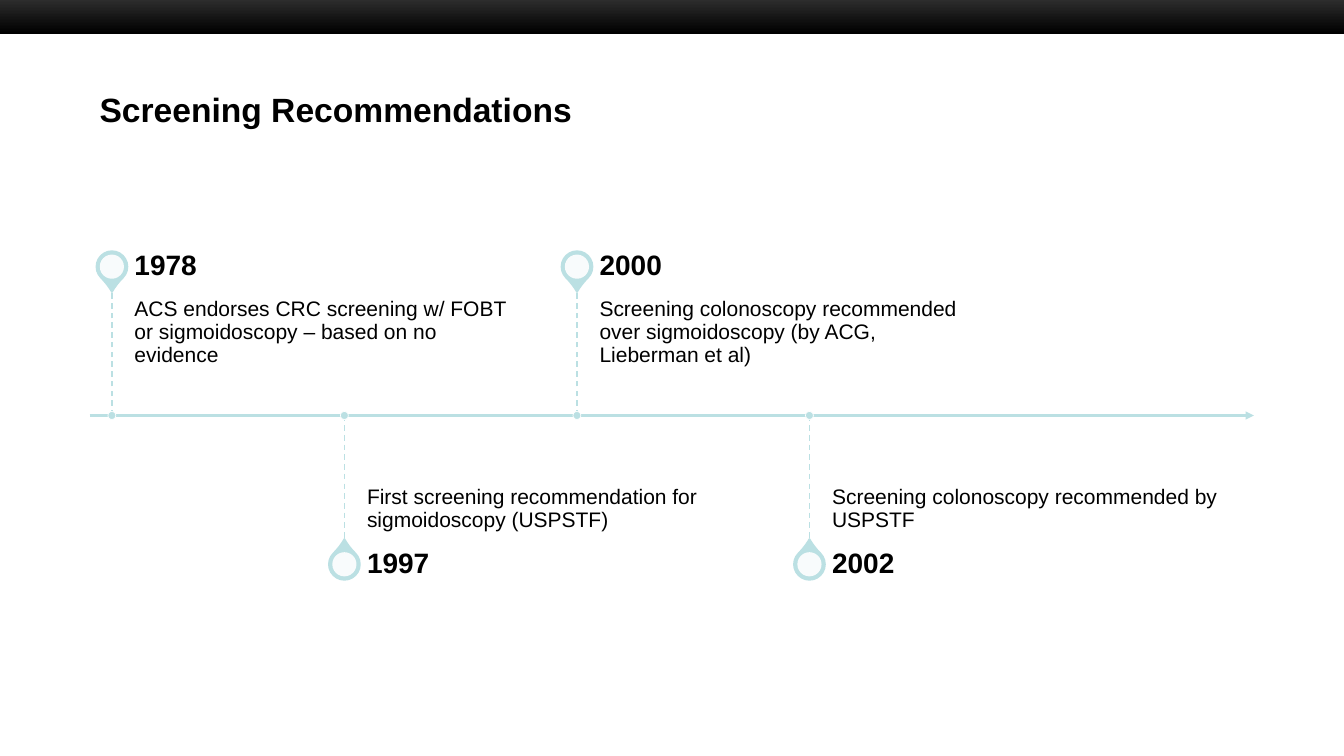
from lxml import etree
from pptx import Presentation
from pptx.dml.color import RGBColor
from pptx.enum.dml import MSO_LINE
from pptx.enum.shapes import MSO_CONNECTOR, MSO_SHAPE
from pptx.enum.text import MSO_ANCHOR, MSO_AUTO_SIZE, PP_ALIGN
from pptx.oxml.ns import qn
from pptx.util import Cm, Pt

TOP, MIDDLE, BOTTOM = MSO_ANCHOR.TOP, MSO_ANCHOR.MIDDLE, MSO_ANCHOR.BOTTOM
OVAL, TEARDROP, RECTANGLE = MSO_SHAPE.OVAL, MSO_SHAPE.TEAR, MSO_SHAPE.RECTANGLE
STRAIGHT, DASH = MSO_CONNECTOR.STRAIGHT, MSO_LINE.DASH

THEME = {
    "font": "Arial",
    "text": RGBColor(0x00, 0x00, 0x00),
    "accent": RGBColor(0xBB, 0xE0, 0xE3),
    "white": RGBColor(0xFF, 0xFF, 0xFF),
    "bar": (RGBColor(0x33, 0x33, 0x33), RGBColor(0x00, 0x00, 0x00)),
    "title": {"size": Pt(24), "bold": True},
    "year": {"size": Pt(20), "bold": True},
    "event": {"size": Pt(15), "bold": False},
}

# Centimetres
AXIS_LEFT, AXIS_RIGHT, AXIS_Y = 2.26, 31.6, 10.47
FIRST_X, STEP = 2.82, 5.86
STEM, YEAR_HEIGHT = 3.19, 1.12
TEXT_GAP, TEXT_WIDTH = 0.57, 9.76
PIN, HOLE, DOT = 0.79, 0.61, 0.2

EVENTS = [
    ("1978", "ACS endorses CRC screening w/ FOBT or sigmoidoscopy – based on no evidence"),
    ("1997", "First screening recommendation for sigmoidoscopy (USPSTF)"),
    ("2000", "Screening colonoscopy recommended over sigmoidoscopy (by ACG, Lieberman et al)"),
    ("2002", "Screening colonoscopy recommended by USPSTF"),
]


def write(box, text, style, anchor, margins, spacing=0.9):
    """Fill a text frame; margins are left, top, right, bottom in cm."""
    frame = box.text_frame
    frame.text = text
    frame.word_wrap = True
    frame.auto_size = MSO_AUTO_SIZE.NONE
    frame.vertical_anchor = anchor
    for side, margin in zip(("left", "top", "right", "bottom"), margins):
        setattr(frame, f"margin_{side}", Cm(margin))
    para = frame.paragraphs[0]
    para.alignment = PP_ALIGN.LEFT
    para.line_spacing = spacing
    font = para.runs[0].font
    for name, value in {"name": THEME["font"], **THEME[style]}.items():
        setattr(font, name, value)
    font.color.rgb = THEME["text"]


def draw_line(start, end, width):
    line = page.shapes.add_connector(STRAIGHT, *map(Cm, start + end))
    line.line.color.rgb = THEME["accent"]
    line.line.width = Pt(width)
    etree.SubElement(line._element.spPr, qn("a:effectLst"))
    return line


deck = Presentation()
deck.slide_width, deck.slide_height = Cm(33.87), Cm(19.05)
page = deck.slides.add_slide(deck.slide_layouts[5])

bar = page.shapes.add_shape(RECTANGLE, 0, Cm(-0.13), deck.slide_width, Cm(0.98))
bar.shadow.inherit = False
bar.line.fill.background()
bar.fill.gradient()
bar.fill.gradient_angle = 270
for stop, color in zip(bar.fill.gradient_stops, THEME["bar"]):
    stop.color.rgb = color

title = page.shapes.title
title.left, title.top, title.width, title.height = map(Cm, (2.26, 2.11, 29.36, 1.9))
write(title, "Screening Recommendations", "title", TOP, (0.25, 0.13, 0.25, 0.13), 1.0)

axis = draw_line((AXIS_LEFT, AXIS_Y), (AXIS_RIGHT, AXIS_Y), 1.5)
etree.SubElement(axis.line._ln, qn("a:tailEnd"), type="triangle")

for index, (year, event) in enumerate(EVENTS):
    x = FIRST_X + index * STEP
    above = index % 2 == 0
    side = -1 if above else 1
    stem_end = AXIS_Y + side * STEM
    year_middle = stem_end + side * YEAR_HEIGHT / 2

    # Texts beside the stem
    event_box = page.shapes.add_textbox(
        Cm(x + TEXT_GAP), Cm(min(AXIS_Y, stem_end)), Cm(TEXT_WIDTH), Cm(STEM))
    if above:
        write(event_box, event, "event", TOP, (0, 0.25, 0.25, 0.41))
    else:
        write(event_box, event, "event", BOTTOM, (0, 0.41, 0, 0.25))
    year_box = page.shapes.add_textbox(
        Cm(x + TEXT_GAP), Cm(year_middle - YEAR_HEIGHT / 2), Cm(TEXT_WIDTH), Cm(YEAR_HEIGHT))
    write(year_box, year, "year", MIDDLE, (0, 0, 0.36, 0))

    stem = draw_line((x, AXIS_Y), (x, stem_end), 1)
    stem.line.dash_style = DASH

    # Pin, its hole and the dot on the axis
    marks = []
    for kind, size, y, fill, outline, width in (
        (TEARDROP, PIN, year_middle, "accent", "accent", 1),
        (OVAL, HOLE, year_middle, "white", None, 0),
        (OVAL, DOT, AXIS_Y, "accent", "white", 0.5),
    ):
        mark = page.shapes.add_shape(
            kind, Cm(x - size / 2), Cm(y - size / 2), Cm(size), Cm(size))
        mark.shadow.inherit = False
        mark.fill.solid()
        mark.fill.fore_color.rgb = THEME[fill]
        if outline:
            mark.line.color.rgb = THEME[outline]
            mark.line.width = Pt(width)
        else:
            mark.line.fill.background()
        marks.append(mark)
    pin, hole, dot = marks
    pin.adjustments[0] = 1.15
    pin.rotation = 135 if above else 315
    hole_color = hole._element.spPr.find(f".//{qn('a:srgbClr')}")
    etree.SubElement(hole_color, qn("a:alpha"), val="90000")

deck.save("out.pptx")
